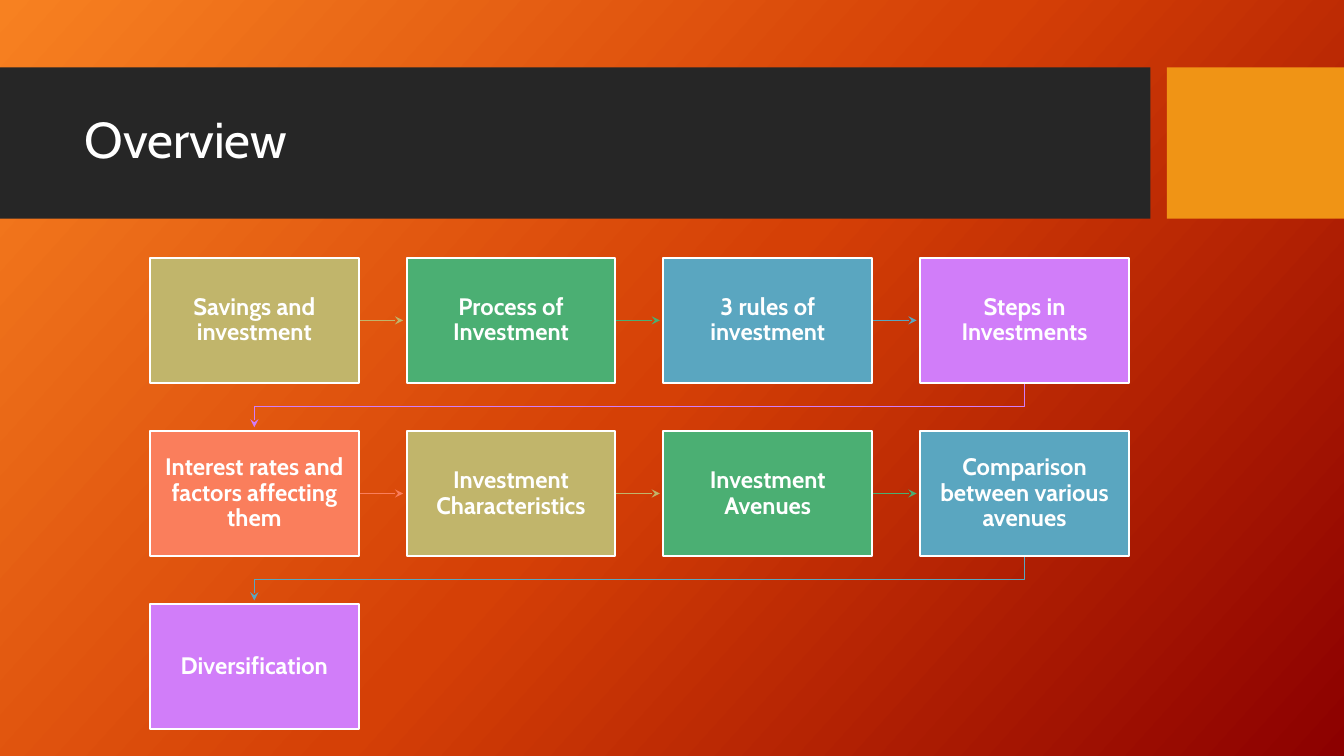
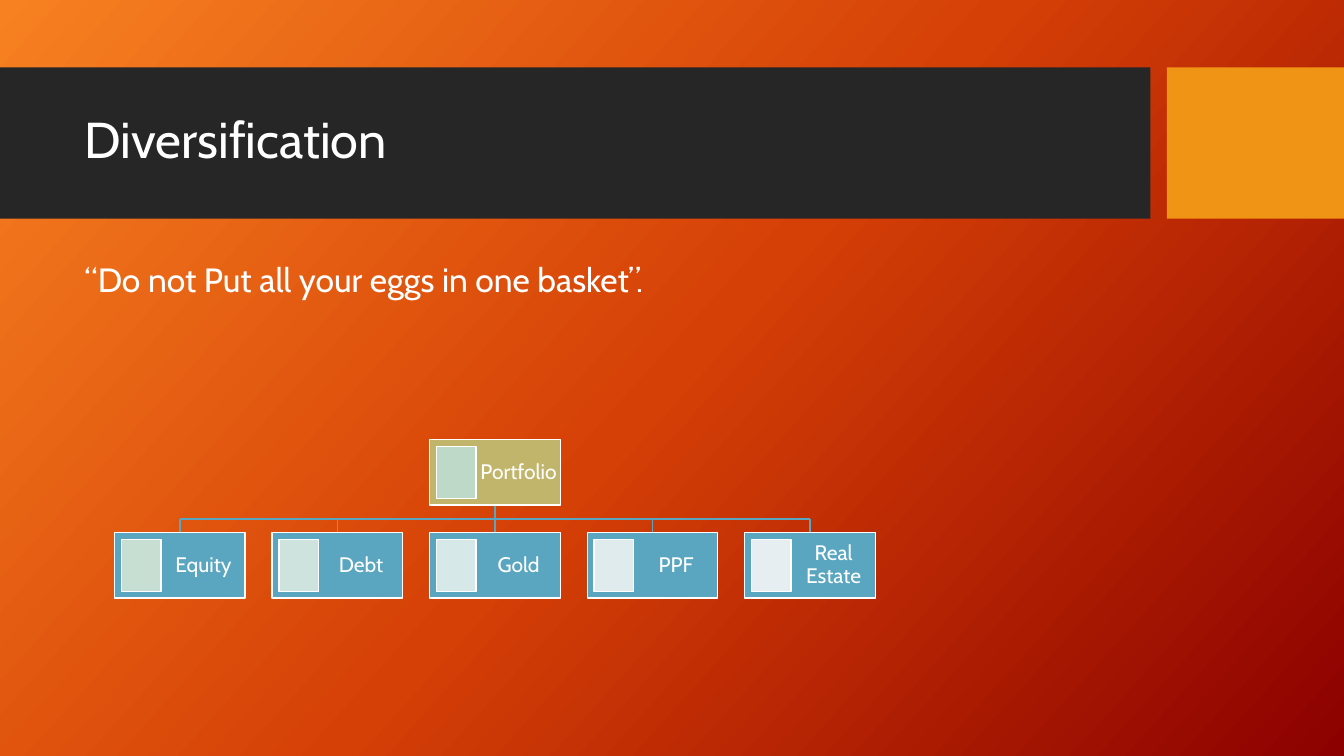
from copy import deepcopy
from dataclasses import dataclass
from itertools import cycle

from lxml.etree import SubElement
from pptx import Presentation
from pptx.dml.color import RGBColor
from pptx.dml.line import LineFormat
from pptx.enum.shapes import MSO_CONNECTOR as Connector, MSO_SHAPE as Preset
from pptx.enum.text import MSO_ANCHOR as Anchor, MSO_AUTO_SIZE as AutoSize, PP_ALIGN as Align
from pptx.oxml.ns import qn
from pptx.shapes.autoshape import Shape
from pptx.slide import Slide, SlideLayout
from pptx.text.text import TextFrame, _Paragraph as Paragraph
from pptx.util import Cm, Pt

FONT = "Cabin"
WHITE, CHARCOAL, AMBER = "FFFFFF", "262626", "F09415"
SAND, GREEN, BLUE, VIOLET, CORAL = "C1B56B", "4BAF73", "5AA6C0", "D17DF9", "FA7E5C"
BACKGROUND = ((0, "F78121"), (0.5, "D54006"), (1, "8C0000"))
SLIDE_WIDTH, SLIDE_HEIGHT = 33.87, 19.05
BAND_TOP, BAND_HEIGHT = 1.7, 3.81
CONTENT_LEFT, CONTENT_WIDTH, CONTENT_TOP = 1.88, 26.7, 6.5

Point = tuple[float, float]
Insets = tuple[float, float, float, float]


@dataclass(frozen=True)
class Box:
    left: float
    top: float
    width: float
    height: float

    @property
    def right(self) -> float:
        return self.left + self.width

    @property
    def bottom(self) -> float:
        return self.top + self.height

    @property
    def center_x(self) -> float:
        return self.left + self.width / 2

    @property
    def center_y(self) -> float:
        return self.top + self.height / 2

    def lengths(self) -> tuple[Cm, Cm, Cm, Cm]:
        return Cm(self.left), Cm(self.top), Cm(self.width), Cm(self.height)


@dataclass(frozen=True)
class Holding:
    label: str
    panel_color: str


TOPICS = (
    "Savings and investment",
    "Process of Investment",
    "3 rules of investment",
    "Steps in Investments",
    "Interest rates and factors affecting them",
    "Investment Characteristics",
    "Investment Avenues",
    "Comparison between various avenues",
    "Diversification",
)
PORTFOLIO = Holding("Portfolio", "BFD9C8")
ASSETS = (
    Holding("Equity", "C7DED3"),
    Holding("Debt", "CFE3DE"),
    Holding("Gold", "D6E8E7"),
    Holding("PPF", "DFEBED"),
    Holding("Real Estate", "E7EEF2"),
)


def color(code: str) -> RGBColor:
    return RGBColor.from_string(code)


def set_line(line: LineFormat, code: str, width: float) -> None:
    line.color.rgb = color(code)
    line.width = Pt(width)


def add_rect(slide: Slide, box: Box, fill: str, outline: float = 0) -> Shape:
    rect = slide.shapes.add_shape(Preset.RECTANGLE, *box.lengths())
    rect.shadow.inherit = False
    rect.fill.solid()
    rect.fill.fore_color.rgb = color(fill)
    if outline:
        set_line(rect.line, WHITE, outline)
    else:
        rect.line.fill.background()
    return rect


def set_text(frame: TextFrame, text: str, size: float, insets: Insets,
             align: Align = Align.CENTER, anchor: Anchor = Anchor.MIDDLE,
             bold: bool = False) -> Paragraph:
    frame.text = text
    frame.word_wrap = True
    frame.auto_size = AutoSize.NONE
    frame.vertical_anchor = anchor
    frame.margin_left, frame.margin_top, frame.margin_right, frame.margin_bottom = map(Cm, insets)
    paragraph = frame.paragraphs[0]
    paragraph.alignment = align
    paragraph.line_spacing = 0.9
    paragraph.font.name = FONT
    paragraph.font.size = Pt(size)
    paragraph.font.bold = bold
    paragraph.font.color.rgb = color(WHITE)
    return paragraph


def add_path(slide: Slide, points: list[Point], code: str, width: float, arrow: bool = False) -> None:
    start, *rest = [(Cm(x), Cm(y)) for x, y in points]
    if len(rest) == 1:
        path = slide.shapes.add_connector(Connector.STRAIGHT, *start, *rest[0])
    else:
        builder = slide.shapes.build_freeform(*start)
        builder.add_line_segments(rest, close=False)
        path = builder.convert_to_shape()
        path.fill.background()
    set_line(path.line, code, width)
    properties = path.element.spPr
    if arrow:
        SubElement(properties.find(qn("a:ln")), qn("a:tailEnd"), type="stealth")
    SubElement(properties, qn("a:effectLst"))


def style_layout(layout: SlideLayout, scratch: Slide) -> None:
    fill = layout.background.fill
    fill.gradient()
    fill.gradient_angle = 318
    stop_list = layout.element.find(".//" + qn("a:gsLst"))
    stop_list.insert(1, deepcopy(stop_list[0]))
    for stop, (position, code) in zip(fill.gradient_stops, BACKGROUND):
        stop.position = position
        stop.color.rgb = color(code)
    bands = (
        (Box(0, BAND_TOP, 28.99, BAND_HEIGHT), CHARCOAL),
        (Box(29.41, BAND_TOP, SLIDE_WIDTH - 29.41, BAND_HEIGHT), AMBER),
    )
    for box, code in bands:
        layout.shapes.element.insert(2, add_rect(scratch, box, code).element)


def add_title(slide: Slide, text: str) -> None:
    title = slide.shapes.title
    title.left, title.top, title.width, title.height = Box(CONTENT_LEFT, 2.08, CONTENT_WIDTH, 3).lengths()
    set_text(title.text_frame, text, 36, (0.25, 0.13, 0.25, 0.13), Align.LEFT)


def add_bullet(slide: Slide, text: str) -> None:
    body = slide.shapes.add_textbox(*Box(CONTENT_LEFT, CONTENT_TOP, CONTENT_WIDTH, 10).lengths())
    paragraph = body.text_frame.paragraphs[0]
    properties = paragraph._p.get_or_add_pPr()
    properties.set("marL", str(Cm(0.64)))
    properties.set("indent", str(-Cm(0.64)))
    bullet_color = SubElement(properties, qn("a:buClr"))
    SubElement(bullet_color, qn("a:srgbClr"), val=WHITE)
    SubElement(properties, qn("a:buFont"), typeface="Arial")
    SubElement(properties, qn("a:buChar"), char="•")
    set_text(body.text_frame, text, 24, (0.25, 0.13, 0.25, 0.13), Align.LEFT, Anchor.TOP)


def build_overview(slide: Slide) -> None:
    add_title(slide, "Overview")
    columns, arrow_length, turn = 4, 1.12, 0.6
    steps = [
        Box(3.78 + 6.47 * (index % columns), CONTENT_TOP + 4.36 * (index // columns), 5.26, 3.15)
        for index in range(len(TOPICS))
    ]
    palette = cycle((SAND, GREEN, BLUE, VIOLET, CORAL))
    for step, following, topic, code in zip(steps, [*steps[1:], None], TOPICS, palette):
        if following:
            if following.top == step.top:
                route = [(step.right, step.center_y), (step.right + arrow_length, step.center_y)]
            else:
                route = [
                    (step.center_x, step.bottom),
                    (step.center_x, step.bottom + turn),
                    (following.center_x, step.bottom + turn),
                    (following.center_x, step.bottom + arrow_length),
                ]
            add_path(slide, route, code, 0.75, arrow=True)
        card = add_rect(slide, step, code, 1.5)
        set_text(card.text_frame, topic, 17, (0.25, 0.28, 0.25, 0.28), bold=True)


def add_holding(slide: Slide, box: Box, holding: Holding, fill: str) -> None:
    card = add_rect(slide, box, fill, 1)
    set_text(card.text_frame, holding.label, 15, (1.22, 0.03, 0.03, 0.03))
    add_rect(slide, Box(box.left + 0.17, box.top + 0.17, 1, 1.32), holding.panel_color, 1)


def build_diversification(slide: Slide) -> None:
    add_title(slide, "Diversification")
    add_bullet(slide, "“Do not Put all your eggs in one basket”.")
    leaves = [Box(2.89 + 3.97 * index, 13.42, 3.29, 1.65) for index in range(len(ASSETS))]
    root = Box(leaves[len(leaves) // 2].left, 11.08, 3.29, 1.65)
    bus = (root.bottom + leaves[0].top) / 2
    branches = [
        [(root.center_x, root.bottom), (root.center_x, bus)],
        [(leaves[0].center_x, bus), (leaves[-1].center_x, bus)],
        *([(leaf.center_x, bus), (leaf.center_x, leaf.top)] for leaf in leaves),
    ]
    for branch in branches:
        add_path(slide, branch, BLUE, 1)
    add_holding(slide, root, PORTFOLIO, SAND)
    for leaf, asset in zip(leaves, ASSETS):
        add_holding(slide, leaf, asset, BLUE)


def main() -> None:
    deck = Presentation()
    deck.slide_width, deck.slide_height = Cm(SLIDE_WIDTH), Cm(SLIDE_HEIGHT)
    layout = deck.slide_layouts.get_by_name("Title Only")
    overview, diversification = (deck.slides.add_slide(layout) for _ in range(2))
    style_layout(layout, overview)
    build_overview(overview)
    build_diversification(diversification)
    deck.save("out.pptx")


if __name__ == "__main__":
    main()
